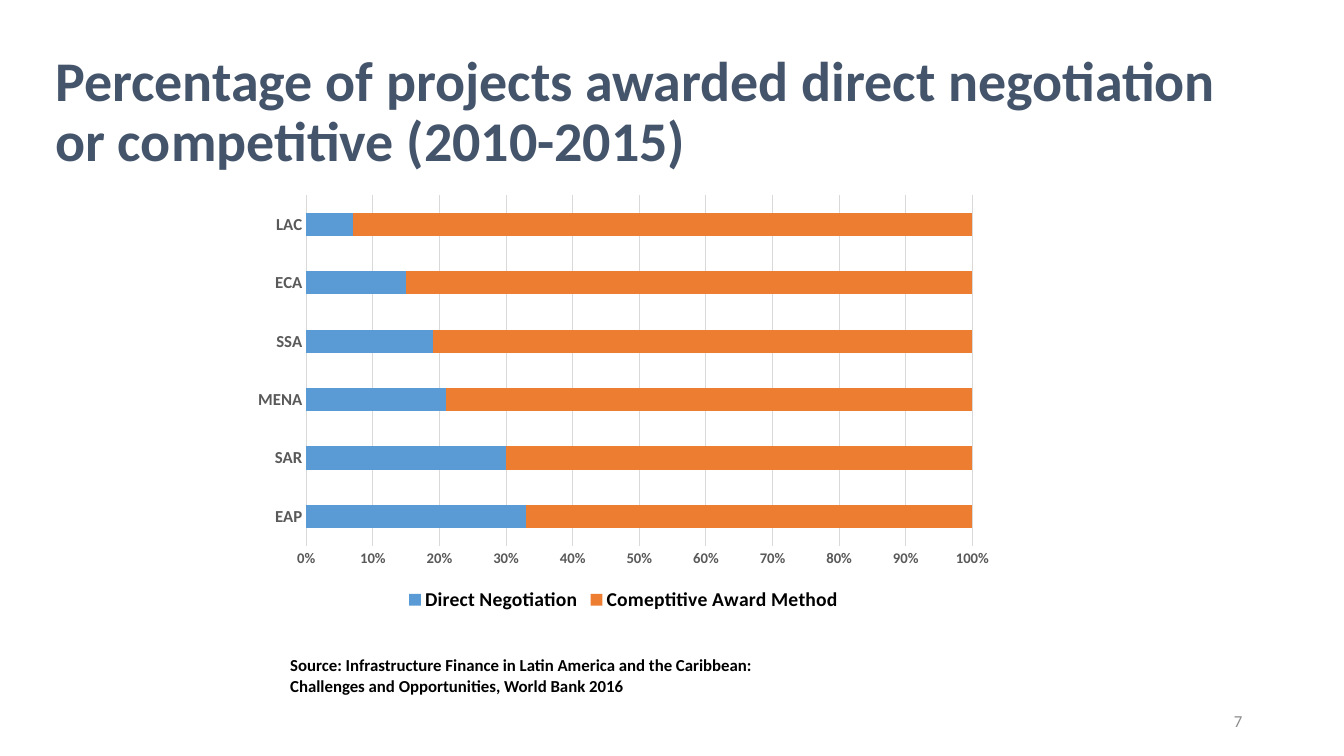
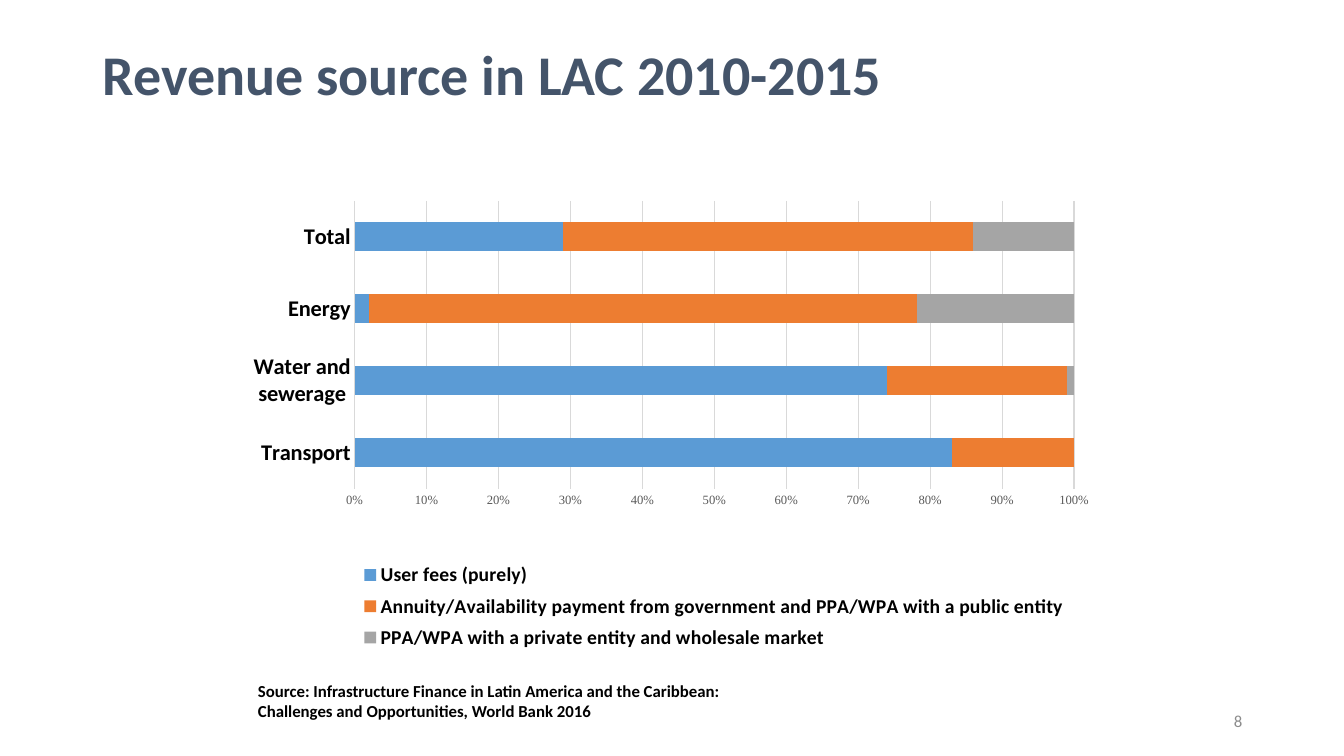
import pptx
import pptx.chart.data
import pptx.dml.color
import pptx.enum.chart
import pptx.enum.text
import pptx.oxml
import pptx.oxml.ns
import pptx.util
from pptx.util import Inches

RGBColor = pptx.dml.color.RGBColor
SLATE = RGBColor(0x44, 0x54, 0x6A)
BLACK = RGBColor(0, 0, 0)
DARK_GREY = RGBColor(0x59, 0x59, 0x59)
PAGE_GREY = RGBColor(0x8C, 0x8C, 0x8C)
LINE_GREY = RGBColor(0xD9, 0xD9, 0xD9)
SERIES_COLORS = (RGBColor(0x5B, 0x9B, 0xD5), RGBColor(0xED, 0x7D, 0x31),
                 RGBColor(0xA5, 0xA5, 0xA5))
SANS = "Calibri"
SERIF = "Times New Roman"
SOURCE = ("Source: Infrastructure Finance in Latin America and the Caribbean:",
          "Challenges and Opportunities, World Bank 2016")


def set_font(font, size, color, bold=False, name=SANS):
    font.name = name
    font.size = pptx.util.Pt(size)
    font.bold = bold
    font.color.rgb = color


def set_layout(parent, index, fractions, inner=False):
    """Place a chart part by fractions (x, y, w, h) of the chart frame."""
    qn = pptx.oxml.ns.qn
    for old in parent.findall(qn("c:layout")):
        parent.remove(old)
    target = '<c:layoutTarget val="inner"/>' if inner else ""
    modes = '<c:xMode val="edge"/><c:yMode val="edge"/>'
    sizes = "".join(f'<c:{key} val="{value}"/>' for key, value in zip("xywh", fractions))
    parent.insert(index, pptx.oxml.parse_xml(
        f'<c:layout {pptx.oxml.ns.nsdecls("c")}><c:manualLayout>'
        f"{target}{modes}{sizes}</c:manualLayout></c:layout>"))


class Deck:
    """Holds the presentation, its shared style and the current slide."""

    def __init__(self):
        self.prs = pptx.Presentation()
        self.prs.slide_width = Inches(13.33)
        self.prs.slide_height = Inches(7.5)
        self.s = None

    def new_slide(self, number):
        self.s = self.prs.slides.add_slide(self.prs.slide_layouts[6])
        p = self.text((9.42, 6.95, 3, 0.4), [str(number)], 12, PAGE_GREY,
                      anchor=pptx.enum.text.MSO_ANCHOR.MIDDLE)
        p.alignment = pptx.enum.text.PP_ALIGN.RIGHT

    def text(self, at, lines, size, color, bold=False,
             anchor=pptx.enum.text.MSO_ANCHOR.TOP):
        tf = self.s.shapes.add_textbox(*map(Inches, at)).text_frame
        tf.word_wrap = True
        tf.vertical_anchor = anchor
        p = tf.paragraphs[0]
        for i, line in enumerate(lines):
            if i:
                p.add_line_break()
            r = p.add_run()
            r.text = line
            set_font(r.font, size, color, bold)
        return p

    def title(self, at, title):
        p = self.text(at, [title], 40, SLATE, True, pptx.enum.text.MSO_ANCHOR.MIDDLE)
        p.line_spacing = 0.9

    def source(self, left, top):
        self.text((left, top, 5.64, 0.5), SOURCE, 12, BLACK, True)

    def share_chart(self, at, categories, series):
        """Add a 100% stacked bar chart; series maps each name to its values."""
        data = pptx.chart.data.CategoryChartData()
        data.categories = categories
        for name, values in series.items():
            data.add_series(name, values)
        chart = self.s.shapes.add_chart(
            pptx.enum.chart.XL_CHART_TYPE.BAR_STACKED_100, *map(Inches, at), data).chart
        set_font(chart.font, 10, BLACK)
        chart.has_title = False

        plot = chart.plots[0]
        plot.gap_width = 150
        plot.overlap = 100
        plot.vary_by_categories = False
        for ser, color in zip(plot.series, SERIES_COLORS):
            ser.format.fill.solid()
            ser.format.fill.fore_color.rgb = color

        cat_axis, val_axis = chart.category_axis, chart.value_axis
        for axis in (cat_axis, val_axis):
            axis.major_tick_mark = pptx.enum.chart.XL_TICK_MARK.NONE
            axis.minor_tick_mark = pptx.enum.chart.XL_TICK_MARK.NONE
        val_axis.has_major_gridlines = True
        for line in (cat_axis.format.line, val_axis.major_gridlines.format.line):
            line.color.rgb = LINE_GREY
            line.width = pptx.util.Pt(0.75)
        val_axis.format.line.fill.background()
        val_axis.tick_labels.number_format = "0%"
        val_axis.tick_labels.number_format_is_linked = False

        chart.has_legend = True
        chart.legend.position = pptx.enum.chart.XL_LEGEND_POSITION.BOTTOM
        chart.legend.include_in_layout = False
        set_font(chart.legend.font, 14, BLACK, True)
        return chart


def award_slide(deck):
    deck.new_slide(7)
    deck.title((0.45, 0.4, 11.97, 1.45),
               "Percentage of projects awarded direct negotiation or competitive (2010-2015)")
    direct = (33, 30, 21, 19, 15, 7)
    chart = deck.share_chart(
        (2.41, 1.85, 7.55, 4.26), ("EAP", "SAR", "MENA", "SSA", "ECA", "LAC"),
        {"Direct Negotiation": direct,
         "Comeptitive Award Method": [100 - value for value in direct]})
    set_font(chart.category_axis.tick_labels.font, 12, DARK_GREY, True)
    set_font(chart.value_axis.tick_labels.font, 10.5, DARK_GREY, True)
    deck.source(2.78, 6.45)


def revenue_slide(deck):
    deck.new_slide(8)
    deck.title((0.92, 0.04, 11.5, 1.45), "Revenue source in LAC 2010-2015")
    chart = deck.share_chart(
        (2, 1.85, 8.92, 4.76), ("Transport", "Water and sewerage", "Energy", "Total"),
        {"User fees (purely)": (83, 74, 2, 29),
         "Annuity/Availability payment from government and PPA/WPA with a public entity":
             (17, 25, 77, 57),
         "PPA/WPA with a private entity and wholesale market": (0, 1, 22, 14)})
    set_font(chart.category_axis.tick_labels.font, 16, BLACK, True)
    set_font(chart.value_axis.tick_labels.font, 9, DARK_GREY, name=SERIF)
    qn = pptx.oxml.ns.qn
    set_layout(chart.element.find(".//" + qn("c:plotArea")), 0,
               (0.17, 0.03, 0.8, 0.6), inner=True)
    set_layout(chart.element.find(".//" + qn("c:legend")), 1, (0.16, 0.77, 0.82, 0.21))
    deck.source(2.46, 6.7)


def main():
    deck = Deck()
    award_slide(deck)
    revenue_slide(deck)
    deck.prs.save("out.pptx")


if __name__ == "__main__":
    main()
